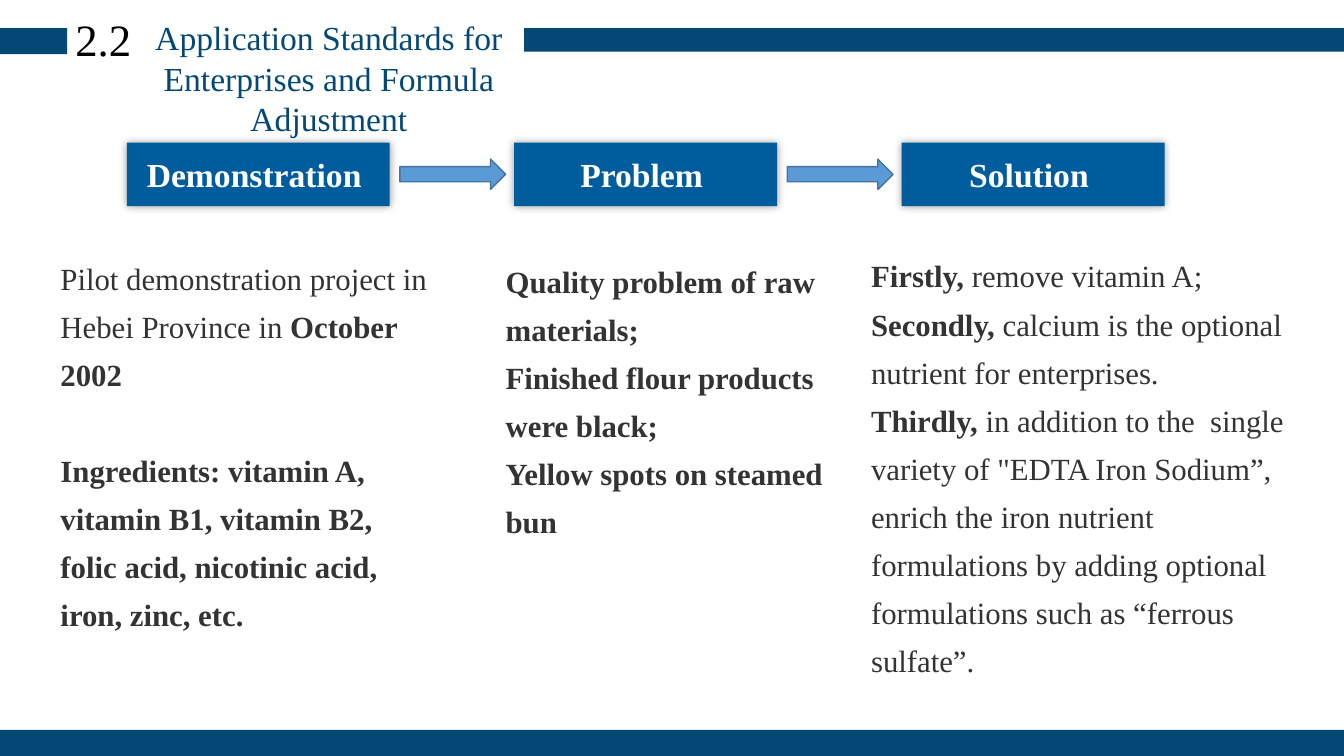
from lxml import etree
from pptx import Presentation
from pptx.dml.color import RGBColor
from pptx.enum.shapes import MSO_SHAPE
from pptx.enum.text import MSO_ANCHOR, MSO_AUTO_SIZE, PP_ALIGN
from pptx.oxml.ns import qn
from pptx.util import Inches, Pt

RECTANGLE = MSO_SHAPE.RECTANGLE
RIGHT_ARROW = MSO_SHAPE.RIGHT_ARROW
TOP = MSO_ANCHOR.TOP
MIDDLE = MSO_ANCHOR.MIDDLE
LEFT = PP_ALIGN.LEFT
CENTER = PP_ALIGN.CENTER
NO_AUTOFIT = MSO_AUTO_SIZE.NONE

COLUMNS, ROWS = 160, 90
COMPARISON_LAYOUT = 4
STEP_PITCH = 46.12

STEPS = ["Demonstration", "Problem", "Solution"]
DETAILS = [
    ((6, 29, 46.4, 47.4), [
        [("Pilot demonstration project in Hebei Province in ", False), ("October 2002", True)],
        [("Ingredients: vitamin A, vitamin B1, vitamin B2, folic acid, "
          "nicotinic acid, iron, zinc, etc.", True)],
    ], 34),
    ((59, 29.4, 43.4, 35.3), [
        [("Quality problem of raw materials;", True)],
        [("Finished flour products were black;", True)],
        [("Yellow spots on steamed bun", True)],
    ], 0),
    ((102.5, 28.7, 53, 52.6), [
        [("Firstly, ", True), ("remove vitamin A;", False)],
        [("Secondly, ", True), ("calcium is the optional nutrient for enterprises.", False)],
        [("Thirdly, ", True),
         ("in addition to the  single variety of \"EDTA Iron Sodium”, enrich the iron nutrient "
          "formulations by adding optional formulations such as “ferrous sulfate”.", False)],
    ], 0),
]


def color(value):
    return RGBColor.from_string(value)


def write(paragraph, text, size=22, bold=False, fill="333333", align=LEFT):
    paragraph.alignment = align
    run = paragraph.add_run()
    run.text = text
    run.font.name = "Times New Roman"
    run.font.size = Pt(size)
    run.font.bold = bold
    run.font.color.rgb = color(fill)


class SlideBuilder:
    navy = "044875"
    step_fill = "005D9D"
    arrow_fill = "5B9BD5"
    arrow_line = "43739E"

    def __init__(self, presentation):
        self.cell_width = presentation.slide_width / COLUMNS
        self.cell_height = presentation.slide_height / ROWS
        self.slide = presentation.slides.add_slide(presentation.slide_layouts[COMPARISON_LAYOUT])

    def place(self, left, top, width, height):
        return (round(left * self.cell_width), round(top * self.cell_height),
                round(width * self.cell_width), round(height * self.cell_height))

    def frame(self, shape, anchor=TOP):
        text_frame = shape.text_frame
        text_frame.word_wrap = True
        text_frame.auto_size = NO_AUTOFIT
        text_frame.vertical_anchor = anchor
        return text_frame

    def placeholder(self, index, area):
        shape = self.slide.placeholders[index]
        shape.left, shape.top, shape.width, shape.height = self.place(*area)
        return self.frame(shape)

    def title(self, text, area):
        paragraph = self.placeholder(0, area).paragraphs[0]
        write(paragraph, text, size=24, fill=self.navy, align=CENTER)

    def number(self, text, area):
        box = self.slide.shapes.add_textbox(*self.place(*area))
        write(self.frame(box).paragraphs[0], text, size=32, fill="000000", align=CENTER)

    def shape(self, kind, area, fill, line=None):
        shape = self.slide.shapes.add_shape(kind, *self.place(*area))
        shape.shadow.inherit = False
        shape.fill.solid()
        shape.fill.fore_color.rgb = color(fill)
        if line:
            shape.line.color.rgb = color(line)
            shape.line.width = Pt(1)
        else:
            shape.line.fill.background()
        return shape

    def band(self, area):
        self.shape(RECTANGLE, area, self.navy)

    def arrow(self, area):
        self.shape(RIGHT_ARROW, area, self.arrow_fill, self.arrow_line)

    def step(self, text, area):
        shape = self.shape(RECTANGLE, area, self.step_fill)
        effects = shape.element.spPr.find(qn("a:effectLst"))
        shadow = etree.SubElement(effects, qn("a:outerShdw"), blurRad=str(Pt(6)),
                                  dist="0", dir="5400000", algn="ctr", rotWithShape="0")
        shade = etree.SubElement(shadow, qn("a:srgbClr"), val="000000")
        etree.SubElement(shade, qn("a:alpha"), val="40000")
        text_frame = self.frame(shape, MIDDLE)
        text_frame.margin_right = Inches(0.18)
        write(text_frame.paragraphs[0], text, size=24, bold=True, fill="FFFFFF", align=CENTER)

    def details(self, index, area, paragraphs, gap):
        text_frame = self.placeholder(index, area)
        for position, runs in enumerate(paragraphs):
            paragraph = text_frame.add_paragraph() if position else text_frame.paragraphs[0]
            properties = paragraph._p.get_or_add_pPr()
            properties.set("marL", "0")
            properties.set("indent", "0")
            etree.SubElement(properties, qn("a:buNone"))
            paragraph.line_spacing = 1.3
            paragraph.space_before = Pt(gap if position else 0)
            for text, bold in runs:
                write(paragraph, text, bold=bold)

    def remove_placeholder(self, index):
        element = self.slide.placeholders[index].element
        element.getparent().remove(element)


def main():
    presentation = Presentation()
    presentation.slide_width = Inches(13.33)
    presentation.slide_height = Inches(7.5)
    builder = SlideBuilder(presentation)

    builder.band((0, 3.36, 8, 3.1))
    builder.band((62.4, 3.36, 97.6, 2.8))
    builder.band((0, 86.9, COLUMNS, 3.1))
    builder.title("Application Standards for Enterprises and Formula Adjustment",
                  (10.7, 1.45, 56.9, 15.7))
    builder.number("2.2", (6, 0.85, 12.6, 7.7))

    for position, step in enumerate(STEPS):
        offset = position * STEP_PITCH
        builder.step(step, (15.1 + offset, 17, 31.3, 7.55))
        if position:
            builder.arrow((47.6 + offset - STEP_PITCH, 18.95, 12.6, 3.6))

    for index, (area, paragraphs, gap) in enumerate(DETAILS, start=1):
        builder.details(index, area, paragraphs, gap)
    builder.remove_placeholder(4)

    presentation.save("out.pptx")


if __name__ == "__main__":
    main()
